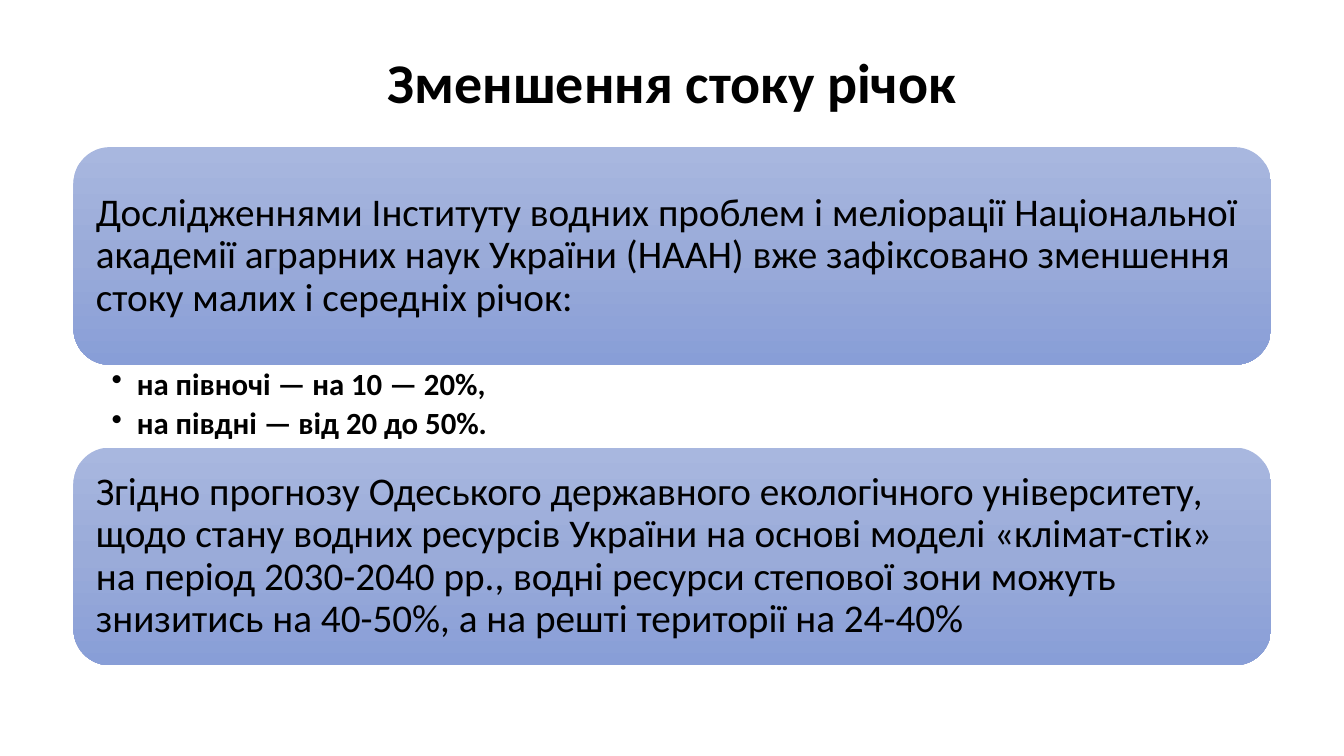
from copy import deepcopy
from dataclasses import dataclass

from lxml.etree import SubElement
from pptx import Presentation
from pptx.dml.color import RGBColor as Rgb
from pptx.enum.shapes import MSO_SHAPE as Shape
from pptx.enum.text import MSO_ANCHOR as Anchor, PP_ALIGN as Align
from pptx.oxml.ns import qn
from pptx.util import Pt


@dataclass(frozen=True)
class Theme:
    face: str = "Calibri"
    ink: str = "000000"
    fade: tuple = ("A8B7DF", "9AABD9", "889ED7")
    head: int = 40
    body: int = 28
    item: int = 22


THEME = Theme()

TITLE = "Зменшення стоку річок"
STUDY = (
    "Дослідженнями Інституту водних проблем і меліорації Національної "
    "академії аграрних наук України (НААН) вже зафіксовано зменшення "
    "стоку малих і середніх річок:"
)
DROPS = ["на півночі — на 10 — 20%,", "на півдні — від 20 до 50%."]
OUTLOOK = (
    "Згідно прогнозу Одеського державного екологічного університету, "
    "щодо стану водних ресурсів України на основі моделі «клімат-стік» "
    "на період 2030-2040 рр., водні ресурси степової зони можуть "
    "знизитись на 40-50%, а на решті території на 24-40%"
)


def write(frame, lines, size, bold=False, align=Align.LEFT, after=0):
    frame.word_wrap = True
    frame.text = "\n".join(lines)
    for para in frame.paragraphs:
        para.alignment = align
        para.line_spacing = 0.9
        para.space_after = Pt(after)
        font = para.font
        font.name, font.size, font.bold = THEME.face, Pt(size), bold
        font.color.rgb = Rgb.from_string(THEME.ink)


def inset(frame, left, top, right, bottom):
    frame.margin_left, frame.margin_top = Pt(left), Pt(top)
    frame.margin_right, frame.margin_bottom = Pt(right), Pt(bottom)


def shade(fill):
    """Fill from top to bottom with three evenly spaced colours."""
    fill.gradient()
    fill.gradient_angle = 270
    first = fill.gradient_stops[0]._gs
    first.addnext(deepcopy(first))
    for i, (stop, tone) in enumerate(zip(fill.gradient_stops, THEME.fade)):
        stop.position = i / 2
        stop.color.rgb = Rgb.from_string(tone)


def bullet(para):
    props = para._p.get_or_add_pPr()
    props.set("marL", str(Pt(18)))
    props.set("indent", str(Pt(-18)))
    SubElement(props, qn("a:buChar"), char="•")


def add_title(slide, box, text):
    frame = slide.shapes.add_textbox(*map(Pt, box)).text_frame
    frame.vertical_anchor = Anchor.MIDDLE
    write(frame, [text], THEME.head, bold=True, align=Align.CENTER)


def add_card(slide, box, text):
    card = slide.shapes.add_shape(Shape.ROUNDED_RECTANGLE, *map(Pt, box))
    card.shadow.inherit = False
    card.line.fill.background()
    shade(card.fill)
    frame = card.text_frame
    frame.vertical_anchor = Anchor.MIDDLE
    inset(frame, 8.4, 8.4, 8.4, 8.4)
    write(frame, [text], THEME.body)


def add_list(slide, box, items):
    frame = slide.shapes.add_textbox(*map(Pt, box)).text_frame
    inset(frame, 27.2, 2.8, 15.7, 2.8)
    write(frame, items, THEME.item, bold=True, after=4.4)
    for para in frame.paragraphs:
        bullet(para)


def add_stack(slide, box):
    """Place two equal cards with the list filling the gap between them."""
    left, top, width, height = box
    tall = 155.5
    gap = height - 2 * tall
    add_card(slide, (left, top, width, tall), STUDY)
    add_list(slide, (left, top + tall, width, gap), DROPS)
    add_card(slide, (left, top + tall + gap, width, tall), OUTLOOK)


def main():
    deck = Presentation()
    deck.slide_width, deck.slide_height = Pt(960), Pt(540)
    slide = deck.slides.add_slide(deck.slide_layouts[6])
    add_title(slide, (66, 28.8, 828, 64.8), TITLE)
    add_stack(slide, (52.5, 105.1, 855.4, 370.1))
    deck.save("out.pptx")


if __name__ == "__main__":
    main()
